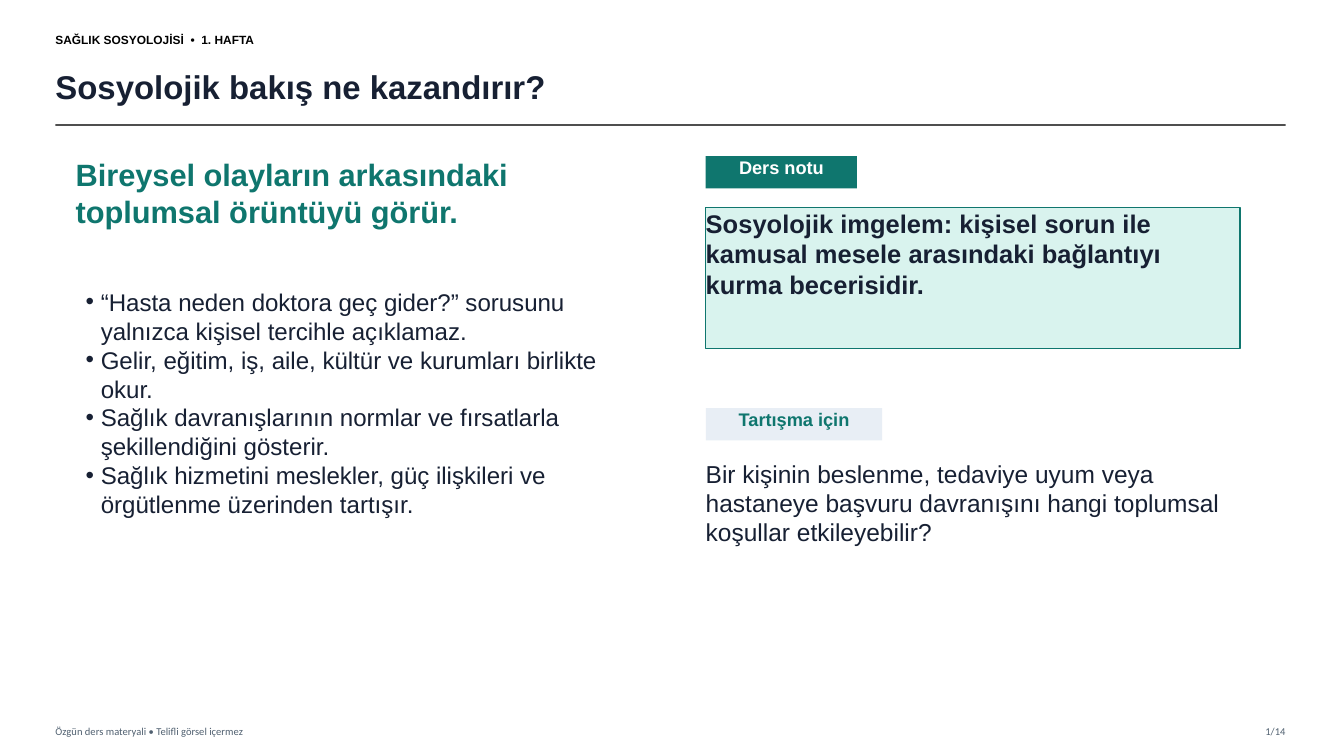
from lxml import etree
from pptx import Presentation
from pptx.dml.color import RGBColor
from pptx.enum.shapes import MSO_CONNECTOR, MSO_SHAPE
from pptx.enum.text import MSO_ANCHOR, MSO_AUTO_SIZE, PP_ALIGN
from pptx.oxml.ns import qn
from pptx.util import Inches, Pt

LINE, RECT = MSO_CONNECTOR.STRAIGHT, MSO_SHAPE.RECTANGLE
TOP, MIDDLE = MSO_ANCHOR.TOP, MSO_ANCHOR.MIDDLE
LEFT, CENTER, RIGHT = PP_ALIGN.LEFT, PP_ALIGN.CENTER, PP_ALIGN.RIGHT
NO_FIT = MSO_AUTO_SIZE.NONE

WHITE = RGBColor(0xFF, 0xFF, 0xFF)
BLACK = RGBColor(0x00, 0x00, 0x00)
INK = RGBColor(0x17, 0x20, 0x33)
GRAY = RGBColor(0x50, 0x60, 0x70)
RULE = RGBColor(0x33, 0x33, 0x33)
TEAL = RGBColor(0x0F, 0x76, 0x6E)
MINT = RGBColor(0xD9, 0xF3, 0xEE)
MIST = RGBColor(0xE8, 0xEE, 0xF5)

EDGE, END = 0.55, 12.75  # left and right page margins
SIDE = 7  # left edge of the right column
WIDE = 5.3  # width of the right column
HANG = 0.15  # bullet indent

POINTS = [
    "“Hasta neden doktora geç gider?” sorusunu yalnızca kişisel tercihle açıklamaz.",
    "Gelir, eğitim, iş, aile, kültür ve kurumları birlikte okur.",
    "Sağlık davranışlarının normlar ve fırsatlarla şekillendiğini gösterir.",
    "Sağlık hizmetini meslekler, güç ilişkileri ve örgütlenme üzerinden tartışır.",
]


class Page:
    def __init__(self, slide):
        self.slide = slide
        self.shapes = slide.shapes
        self.fonts = {
            "kicker": {"name": "Arial", "size": Pt(8.5), "bold": True, "color": BLACK},
            "title": {"name": "Arial", "size": Pt(23.5), "bold": True, "color": INK},
            "lead": {"name": "Arial", "size": Pt(22), "bold": True, "color": TEAL},
            "list": {"name": "Arial", "size": Pt(17.2), "bold": False, "color": INK},
            "body": {"name": "Arial", "size": Pt(17.5), "bold": False, "color": INK},
            "note": {"name": "Arial", "size": Pt(18.2), "bold": True, "color": INK},
            "tag": {"name": "Arial", "size": Pt(13), "bold": True, "color": WHITE},
            "topic": {"name": "Arial", "size": Pt(13), "bold": True, "color": TEAL},
            "foot": {"name": "Calibri", "size": Pt(7.5), "bold": False, "color": GRAY},
        }

    def fill(self, shape, lines, style, align=LEFT, anchor=TOP, bullet=False):
        """Put formatted lines into a shape."""
        frame = shape.text_frame
        setup = {"word_wrap": True, "auto_size": NO_FIT, "vertical_anchor": anchor,
                 "margin_left": 0, "margin_right": 0, "margin_top": 0, "margin_bottom": 0}
        for key, value in setup.items():
            setattr(frame, key, value)
        frame.text = "\n".join(lines)
        for para in frame.paragraphs:
            para.alignment = align
            para.space_before = Pt(0)
            if bullet:
                self.mark(para)
            for key, value in self.fonts[style].items():
                if key == "color":
                    para.runs[0].font.color.rgb = value
                else:
                    setattr(para.runs[0].font, key, value)

    def mark(self, para):
        """Give a paragraph a hanging round bullet."""
        props = para._p.get_or_add_pPr()
        props.set("marL", str(Inches(HANG)))
        props.set("indent", str(-Inches(HANG)))
        etree.SubElement(props, qn("a:buFont")).set("typeface", "Arial")
        etree.SubElement(props, qn("a:buChar")).set("char", "•")

    def text(self, box, line, style, **form):
        shape = self.shapes.add_textbox(*map(Inches, box))
        self.fill(shape, [line], style, **form)

    def holder(self, index, box, lines, style, **form):
        """Move and fill one of the layout's placeholders."""
        shape = self.slide.placeholders[index]
        shape.left, shape.top, shape.width, shape.height = map(Inches, box)
        self.fill(shape, lines, style, **form)

    def panel(self, box, line, style, color, edge=None, align=LEFT):
        shape = self.shapes.add_shape(RECT, *map(Inches, box))
        shape.shadow.inherit = False
        shape.fill.solid()
        shape.fill.fore_color.rgb = color
        if edge is None:
            shape.line.fill.background()
        else:
            shape.line.color.rgb = edge
            shape.line.width = Pt(1)
        self.fill(shape, [line], style, align=align)

    def rule(self, top):
        line = self.shapes.add_connector(
            LINE, Inches(EDGE), Inches(top), Inches(END), Inches(top))
        line.line.color.rgb = RULE
        line.line.width = Pt(1.2)
        props = line._element.spPr
        color = props.find(".//" + qn("a:srgbClr"))
        etree.SubElement(color, qn("a:alpha")).set("val", "85000")
        etree.SubElement(props, qn("a:effectLst"))


def main():
    deck = Presentation()
    deck.slide_width, deck.slide_height = Inches(13.33), Inches(7.5)
    page = Page(deck.slides.add_slide(deck.slide_layouts[1]))

    page.text((EDGE, 0.25, 3.6, 0.28), "SAĞLIK SOSYOLOJİSİ  •  1. HAFTA",
              "kicker", anchor=MIDDLE)
    page.holder(0, (EDGE, 0.58, 11.95, 0.55), ["Sosyolojik bakış ne kazandırır?"],
                "title", anchor=MIDDLE)
    page.rule(1.24)

    page.text((0.75, 1.55, 4.6, 1),
              "Bireysel olayların arkasındaki toplumsal örüntüyü görür.", "lead")
    page.holder(1, (0.85, 2.85, 5.25, 2.7), POINTS, "list", bullet=True)

    page.panel((SIDE, 1.55, 1.5, 0.32), "Ders notu", "tag", TEAL, align=CENTER)
    page.panel((SIDE, 2.06, WIDE, 1.4),
               "Sosyolojik imgelem: kişisel sorun ile kamusal mesele arasındaki "
               "bağlantıyı kurma becerisidir.", "note", MINT, edge=TEAL)
    page.panel((SIDE, 4.05, 1.75, 0.32), "Tartışma için", "topic", MIST, align=CENTER)
    page.text((SIDE, 4.55, WIDE, 1.25),
              "Bir kişinin beslenme, tedaviye uyum veya hastaneye başvuru davranışını "
              "hangi toplumsal koşullar etkileyebilir?", "body")

    page.text((EDGE, 7.14, 6, 0.22), "Özgün ders materyali • Telifli görsel içermez",
              "foot", anchor=MIDDLE)
    page.text((END - 0.65, 7.14, 0.65, 0.22), "1/14", "foot", align=RIGHT, anchor=MIDDLE)

    deck.save("out.pptx")


if __name__ == "__main__":
    main()
